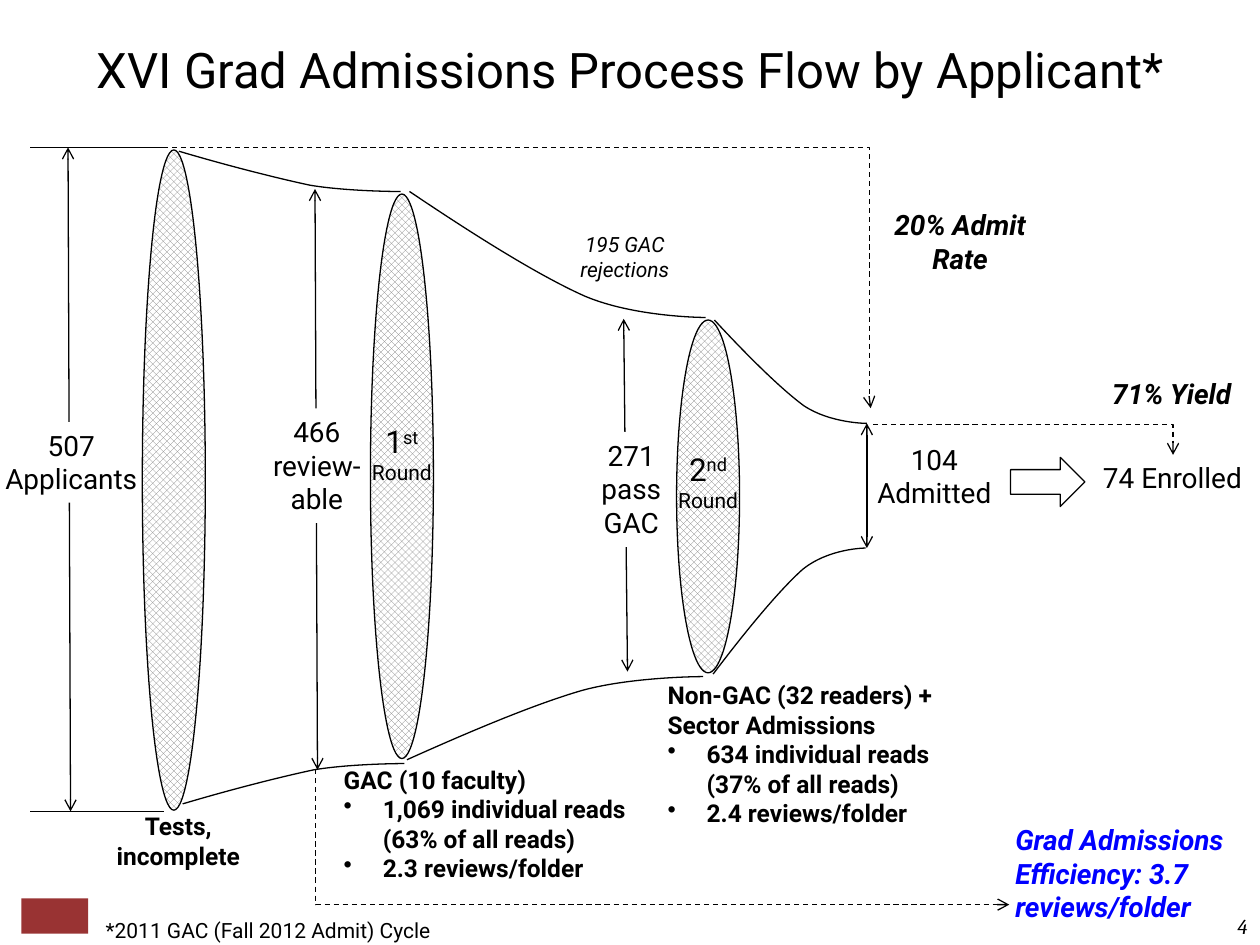
from lxml.etree import SubElement
from pptx import Presentation
from pptx.dml.color import RGBColor
from pptx.enum.dml import MSO_LINE, MSO_PATTERN
from pptx.enum.shapes import MSO_CONNECTOR as LINK, MSO_SHAPE as SHAPE
from pptx.enum.text import MSO_ANCHOR as ANCHOR, MSO_AUTO_SIZE as AUTO, PP_ALIGN as ALIGN
from pptx.oxml.ns import qn
from pptx.util import Emu, Pt

PX = 9144
BLACK = RGBColor(0x00, 0x00, 0x00)
WHITE = RGBColor(0xFF, 0xFF, 0xFF)
GRAY = RGBColor(0x80, 0x80, 0x80)
BLUE = RGBColor(0x00, 0x00, 0xFF)
MAROON = RGBColor(0x99, 0x33, 0x33)
CURVE_X = (0.21, 0.43, 0.59, 0.76, 1, 1)
CURVE_Y = (0.33, 0.66, 0.83, 1, 1, 1)
BULLET_INDENT = 31


def px(*lengths):
    return [Emu(round(length * PX)) for length in lengths]


def stroke(line):
    line.color.rgb = BLACK
    line.width = Pt(0.75)


def add_run(paragraph, words, size, color, font, bold, italic, raised=0):
    run = paragraph.add_run()
    run.text = words
    run.font.name = font
    run.font.size = Pt(size)
    run.font.bold = bold
    run.font.italic = italic
    run.font.color.rgb = color
    if raised:
        run._r.get_or_add_rPr().set("baseline", str(raised * 1000))


def add_bullet(paragraph):
    props = paragraph._p.get_or_add_pPr()
    props.set("marL", str(BULLET_INDENT * PX))
    props.set("indent", str(-BULLET_INDENT * PX))
    SubElement(props, qn("a:buChar")).set("char", "•")


def write(slide, box, runs, size=16, align=ALIGN.CENTER, color=BLACK, font="Roboto",
          bold=False, italic=False, bullets=(), wrap=True, fill=None):
    label = slide.shapes.add_textbox(*px(*box))
    if fill is not None:
        label.fill.solid()
        label.fill.fore_color.rgb = fill
    frame = label.text_frame
    frame.word_wrap = wrap
    frame.auto_size = AUTO.SHAPE_TO_FIT_TEXT
    first = frame.paragraphs[0]
    first.alignment = align
    for words, run_size, raised in ([(runs, size, 0)] if isinstance(runs, str) else runs):
        add_run(first, words, run_size, color, font, bold, italic, raised)
    for bullet in bullets:
        item = frame.add_paragraph()
        item.alignment = align
        add_bullet(item)
        add_run(item, bullet, size, color, font, bold, italic)
    return label


def connect(slide, start, end, kind=LINK.STRAIGHT, head=False, tail=False, dashed=False):
    link = slide.shapes.add_connector(kind, *px(*start, *end))
    stroke(link.line)
    if dashed:
        link.line.dash_style = MSO_LINE.DASH
    outline = link.line._get_or_add_ln()
    for tag, wanted in (("a:headEnd", head), ("a:tailEnd", tail)):
        if wanted:
            SubElement(outline, qn(tag)).set("type", "arrow")
    SubElement(link._element.spPr, qn("a:effectLst"))
    return link


def elbow(slide, start, end, bend=None):
    link = connect(slide, start, end, LINK.ELBOW, tail=True, dashed=True)
    geometry = link._element.spPr.find(qn("a:prstGeom"))
    if bend is None:
        geometry.set("prst", "bentConnector2")
    else:
        guide = SubElement(geometry.get_or_add_avLst(), qn("a:gd"))
        guide.set("name", "adj1")
        guide.set("fmla", f"val {bend}")


def funnel_edge(slide, box, rising=False):
    left, top, width, height = box
    start, travel = (top + height, -height) if rising else (top, height)
    points = [(round(left + width * fx), round(start + travel * fy))
              for fx, fy in zip(CURVE_X, CURVE_Y)]
    builder = slide.shapes.build_freeform(left, start, scale=PX)
    builder.add_line_segments(points, close=False)
    edge = builder.convert_to_shape()
    edge.shadow.inherit = False
    edge.fill.background()
    stroke(edge.line)
    segments = list(edge._element.iter(qn("a:lnTo")))
    for first, second, third in zip(*[iter(segments)] * 3):
        first.tag = qn("a:cubicBezTo")
        for segment in (second, third):
            first.append(segment[0])
            segment.getparent().remove(segment)


def stage(slide, box, count, count_box, lens_box, lean, round_name=None, round_box=None):
    left, top, _, height = box

    def place(part):
        return left + part[0], top + part[1], part[2], part[3]

    connect(slide, (left, top), (left + lean, top + height), head=True, tail=True)
    write(slide, place(count_box), count, fill=WHITE)
    lens = slide.shapes.add_shape(SHAPE.OVAL, *px(*place(lens_box)))
    lens.shadow.inherit = False
    lens.fill.patterned()
    lens.fill.pattern = MSO_PATTERN.OUTLINED_DIAMOND
    lens.fill.fore_color.rgb = GRAY
    lens.fill.back_color.rgb = WHITE
    stroke(lens.line)
    if round_name:
        write(slide, place(round_box), round_name)


def funnel(slide, box):
    left, top, _, height = box
    stage(slide, (left + 30, top, 109, height), "507 Applicants",
          (-65, 218, 135, 64), (59, 2, 50, 524), 2)
    stage(slide, (left + 226, top + 33, 94, 461), "466 review-able",
          (-57, 174, 117, 91), (44, 4, 50, 448), 2,
          [("1", 18, 0), ("st", 18, 30), (" Round", 12, 0)], (26, 180, 86, 61))
    stage(slide, (left + 471, top + 136, 92, 280), "271 pass GAC",
          (-41, 90, 94, 91), (42, 1, 50, 280), 3,
          [("2", 18, 0), ("nd ", 18, 30), ("Round", 12, 0)], (24, 99, 86, 61))
    for y in (top, top + height):
        connect(slide, (left, y), (left + 106, y))
    for x, y, width, drop, rising in ((118, 3, 176, 32, False), (121, 489, 176, 32, True),
                                      (301, 35, 235, 100, False), (299, 420, 235, 66, True),
                                      (543, 137, 121, 82, False), (542, 318, 121, 100, True)):
        funnel_edge(slide, (left + x, top + y, width, drop), rising)


def outcome(slide, box):
    left, top, _, height = box
    connect(slide, (left, top), (left, top + height), head=True, tail=True)
    write(slide, (left - 16, top + 10, 139, 64), "104 Admitted")
    arrow = slide.shapes.add_shape(SHAPE.RIGHT_ARROW, *px(left + 114, top + 27, 59, 39))
    arrow.shadow.inherit = False
    arrow.fill.background()
    stroke(arrow.line)
    write(slide, (left + 162, top + 25, 161, 37), "74 Enrolled")


def rates(slide, box):
    left, top, _, _ = box
    elbow(slide, (left, top), (left + 569, top + 207), bend=99800)
    write(slide, (left + 570, top + 43, 140, 64), "20% Admit Rate", bold=True, italic=True)
    elbow(slide, (left + 571, top + 220), (left + 809, top + 244))
    write(slide, (left + 738, top + 177, 140, 37), "71% Yield", bold=True, italic=True)


def review_notes(slide, box):
    left, top, _, _ = box
    notes = {"size": 14, "bold": True}
    write(slide, (left, top + 104, 135, 57), "Tests, incomplete", **notes)
    write(slide, (left + 189, top + 67, 257, 104), "GAC (10 faculty)", align=ALIGN.LEFT,
          bullets=("1,069 individual reads (63% of all reads)", "2.3 reviews/folder"), **notes)
    write(slide, (left + 446, top, 257, 128), "Non-GAC (32 readers) + Sector Admissions",
          align=ALIGN.LEFT,
          bullets=("634 individual reads (37% of all reads)", "2.4 reviews/folder"), **notes)
    write(slide, (left + 357, top - 356, 130, 50), "195 GAC rejections", size=12, italic=True)


def efficiency(slide, box):
    left, top, _, _ = box
    elbow(slide, (left, top), (left + 551, top + 107), bend=100)
    write(slide, (left + 546, top + 37, 207, 91), "Grad Admissions Efficiency: 3.7 reviews/folder",
          align=ALIGN.LEFT, color=BLUE, bold=True, italic=True)


def heading(slide, box):
    title = write(slide, box, "XVI Grad Admissions Process Flow by Applicant*", size=28)
    title.text_frame.auto_size = AUTO.NONE
    title.text_frame.vertical_anchor = ANCHOR.MIDDLE


def footer(slide, box):
    left, top, _, _ = box
    emblem = slide.shapes.add_shape(SHAPE.RECTANGLE, *px(left + 17, top, 53, 28))
    emblem.shadow.inherit = False
    emblem.fill.solid()
    emblem.fill.fore_color.rgb = MAROON
    emblem.line.fill.background()
    write(slide, (left + 74, top + 10, 283, 30), "*2011 GAC (Fall 2012 Admit) Cycle",
          size=12, align=ALIGN.LEFT, wrap=False)
    write(slide, (left + 770, top + 7, 230, 30), "4", size=12, align=ALIGN.RIGHT,
          font="Cambria", italic=True)


def main():
    deck = Presentation()
    deck.slide_width, deck.slide_height = px(1000, 750)
    slide = deck.slides.add_slide(deck.slide_layouts[6])
    heading(slide, (0, -8, 1000, 125))
    funnel(slide, (24, 117, 664, 527))
    outcome(slide, (688, 336, 323, 99))
    rates(slide, (122, 117, 878, 244))
    review_notes(slide, (74, 535, 703, 171))
    efficiency(slide, (250, 611, 753, 128))
    footer(slide, (0, 713, 1000, 37))
    deck.save("out.pptx")


if __name__ == "__main__":
    main()
